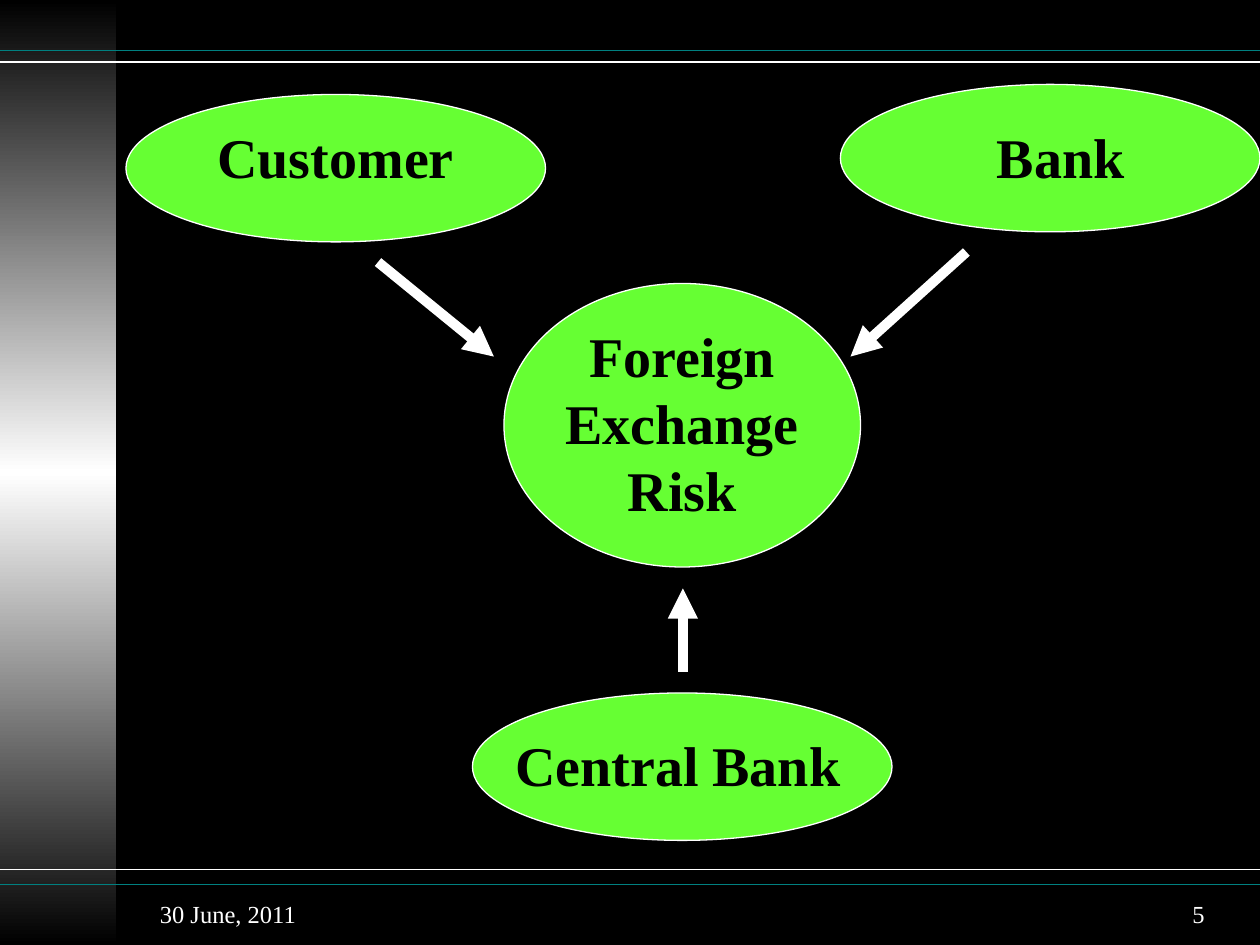
import pptx
import pptx.dml.color
import pptx.enum.shapes
import pptx.enum.text
import pptx.oxml
import pptx.oxml.ns
import pptx.util

Inches = pptx.util.Inches
Align = pptx.enum.text.PP_ALIGN
Anchor = pptx.enum.text.MSO_ANCHOR
Shapes = pptx.enum.shapes.MSO_SHAPE

FONT = "Times New Roman"
BLACK, WHITE, TEAL, GREEN = "000000", "FFFFFF", "008080", "66FF33"


def color(hex_string):
    return pptx.dml.color.RGBColor.from_string(hex_string)


def drawing_element(tag, content=""):
    namespace = pptx.oxml.ns.nsdecls("a")
    return pptx.oxml.parse_xml(f"<a:{tag} {namespace}>{content}</a:{tag}>")


def add_side_band(slide):
    """Add the left band, fading from black to white and back."""
    band = slide.shapes.add_shape(Shapes.RECTANGLE, 0, 0, Inches(0.92), Inches(7.5))
    band.shadow.inherit = False
    band.line.fill.background()
    band.fill.gradient()
    band.fill.gradient_angle = 90
    stops = "".join(
        f'<a:gs pos="{percent * 1000}"><a:srgbClr val="{shade}"/></a:gs>'
        for percent, shade in ((0, BLACK), (50, WHITE), (100, BLACK))
    )
    old_stops = band.element.spPr.find(".//" + pptx.oxml.ns.qn("a:gsLst"))
    old_stops.getparent().replace(old_stops, drawing_element("gsLst", stops))


def add_line(slide, start, end, hex_string, width):
    line = slide.shapes.add_connector(
        pptx.enum.shapes.MSO_CONNECTOR.STRAIGHT, *map(Inches, start + end)
    )
    line.line.color.rgb = color(hex_string)
    line.line.width = pptx.util.Pt(width)
    line.element.spPr.append(drawing_element("effectLst"))
    return line


def add_arrow(slide, start, end):
    arrow = add_line(slide, start, end, WHITE, 5.75)
    head = drawing_element("tailEnd")
    head.set("type", "triangle")
    arrow.line._get_or_add_ln().append(head)


def add_ellipse(slide, box):
    ellipse = slide.shapes.add_shape(Shapes.OVAL, *map(Inches, box))
    ellipse.shadow.inherit = False
    ellipse.fill.solid()
    ellipse.fill.fore_color.rgb = color(GREEN)
    ellipse.line.color.rgb = color(WHITE)
    ellipse.line.width = pptx.util.Pt(0.75)


def add_text(slide, box, text, size, hex_string, align, bold=False,
             anchor=Anchor.TOP, wrap=True):
    frame = slide.shapes.add_textbox(*map(Inches, box)).text_frame
    frame.word_wrap = wrap
    frame.vertical_anchor = anchor
    paragraph = frame.paragraphs[0]
    paragraph.alignment = align
    run = paragraph.add_run()
    run.text = text
    run.font.name = FONT
    run.font.size = pptx.util.Pt(size)
    run.font.bold = bold
    run.font.color.rgb = color(hex_string)


def main():
    presentation = pptx.Presentation()
    presentation.slide_width, presentation.slide_height = Inches(10), Inches(7.5)
    slide = presentation.slides.add_slide(presentation.slide_layouts[6])
    slide.background.fill.solid()
    slide.background.fill.fore_color.rgb = color(BLACK)

    add_side_band(slide)
    for y, line_color in ((0.4, TEAL), (0.49, WHITE), (6.9, WHITE), (7.02, TEAL)):
        add_line(slide, (0, y), (10, y), line_color, 1)

    for left, text, align in (
        (1.17, "30 June, 2011", Align.LEFT),
        (7.58, "5", Align.RIGHT),
    ):
        add_text(slide, (left, 7, 2.08, 0.5), text, 14, WHITE, align,
                 anchor=Anchor.MIDDLE)

    parties = (
        ("Bank", (6.67, 0.67, 3.33, 1.17), (7.42, 0.92, 2, 0.63)),
        ("Customer", (1, 0.75, 3.33, 1.17), (1.58, 0.92, 2.17, 0.63)),
        ("Central Bank", (3.75, 5.5, 3.33, 1.17), (3.92, 5.75, 2.92, 0.63)),
        ("Foreign Exchange Risk", (4, 2.25, 2.83, 2.25), (4.33, 2.5, 2.17, 1.7)),
    )
    for label, ellipse_box, label_box in parties:
        add_ellipse(slide, ellipse_box)
        add_text(slide, label_box, label, 32, BLACK, Align.CENTER, bold=True)

    for start, end in (
        ((3, 2.08), (3.92, 2.83)),
        ((7.67, 2), (6.75, 2.83)),
        ((5.42, 5.33), (5.42, 4.67)),
    ):
        add_arrow(slide, start, end)

    presentation.save("out.pptx")


if __name__ == "__main__":
    main()
